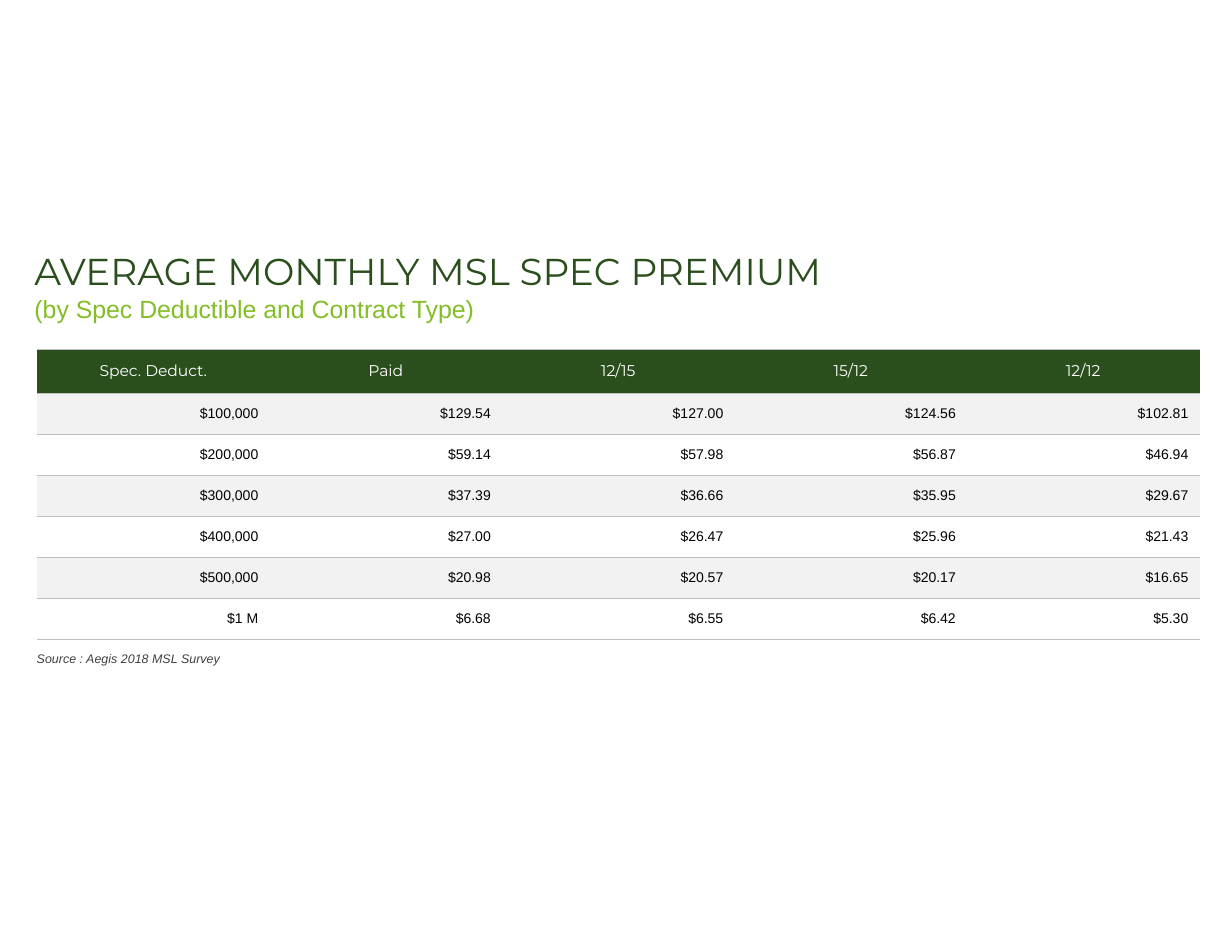
"""Build the average monthly MSL spec premium slide."""
from lxml import etree
from pptx import Presentation
from pptx import util as u
from pptx.dml.color import RGBColor
from pptx.enum import text
from pptx.oxml.ns import qn

GREEN, LIME, GREY, RULE = "2A4F1D", "83BE26", "404040", "BFBFBF"
BANDS = ("FFFFFF", "F2F2F2")
NO_STYLE = "{2D5ABB26-0587-4C30-8999-92F81FD0307C}"

TITLE = [
    ("AVERAGE MONTHLY MSL SPEC PREMIUM", "Montserrat", 24, GREEN, False),
    ("(by Spec Deductible and Contract Type)", "Arial", 16, LIME, False),
]
SOURCE = [("Source : Aegis 2018 MSL Survey", "Arial", 8, GREY, True)]
PREMIUMS = [
    ("Spec. Deduct.", "Paid", "12/15", "15/12", "12/12"),
    ("$100,000", "$129.54", "$127.00", "$124.56", "$102.81"),
    ("$200,000", "$59.14", "$57.98", "$56.87", "$46.94"),
    ("$300,000", "$37.39", "$36.66", "$35.95", "$29.67"),
    ("$400,000", "$27.00", "$26.47", "$25.96", "$21.43"),
    ("$500,000", "$20.98", "$20.57", "$20.17", "$16.65"),
    ("$1 M", "$6.68", "$6.55", "$6.42", "$5.30"),
]
HEAD_H, ROW_H, TABLE_W = 0.39, 0.366, 10.38


def rgb(value):
    return RGBColor.from_string(value)


def write(p, words, face, size, color, italic=False):
    p.text = words
    p.font.name, p.font.size = face, u.Pt(size)
    p.font.color.rgb, p.font.italic = rgb(color), italic


def add_text(s, box, lines):
    tf = s.shapes.add_textbox(*map(u.Inches, box)).text_frame
    tf.word_wrap = False
    tf.auto_size = text.MSO_AUTO_SIZE.SHAPE_TO_FIT_TEXT
    for i, line in enumerate(lines):
        write(tf.add_paragraph() if i else tf.paragraphs[0], *line)


def add_rules(cell):
    tc_pr = cell._tc.get_or_add_tcPr()
    for i, side in enumerate(("a:lnT", "a:lnB")):
        ln = etree.Element(qn(side), w=str(u.Pt(0.25)))
        fill = etree.SubElement(ln, qn("a:solidFill"))
        etree.SubElement(fill, qn("a:srgbClr"), val=RULE)
        tc_pr.insert(i, ln)


def add_premiums(s, left, top):
    n_rows, n_cols = len(PREMIUMS), len(PREMIUMS[0])
    height = HEAD_H + ROW_H * (n_rows - 1)
    box = map(u.Inches, (left, top, TABLE_W, height))
    table = s.shapes.add_table(n_rows, n_cols, *box).table
    table._tbl.tblPr[0].text = NO_STYLE
    table.first_row = table.horz_banding = False
    for r, values in enumerate(PREMIUMS):
        table.rows[r].height = u.Inches(ROW_H if r else HEAD_H)
        for c, value in enumerate(values):
            cell = table.cell(r, c)
            cell.vertical_anchor = text.MSO_ANCHOR.MIDDLE
            cell.fill.solid()
            cell.fill.fore_color.rgb = rgb(BANDS[r % 2] if r else GREEN)
            add_rules(cell)
            p = cell.text_frame.paragraphs[0]
            p.alignment = text.PP_ALIGN.RIGHT if r else text.PP_ALIGN.CENTER
            style = ("Arial", 9, "000000") if r else ("Montserrat", 10, "FFFFFF")
            write(p, value, *style)


def main():
    prs = Presentation()
    prs.slide_width, prs.slide_height = u.Inches(11), u.Inches(8.5)
    s = prs.slides.add_slide(prs.slide_layouts[6])
    add_text(s, (0.21, 2.17, 7.87, 0.77), TITLE)
    add_premiums(s, 0.33, 3.12)
    add_text(s, (0.23, 5.76, 1.87, 0.24), SOURCE)
    prs.save("out.pptx")


if __name__ == "__main__":
    main()
